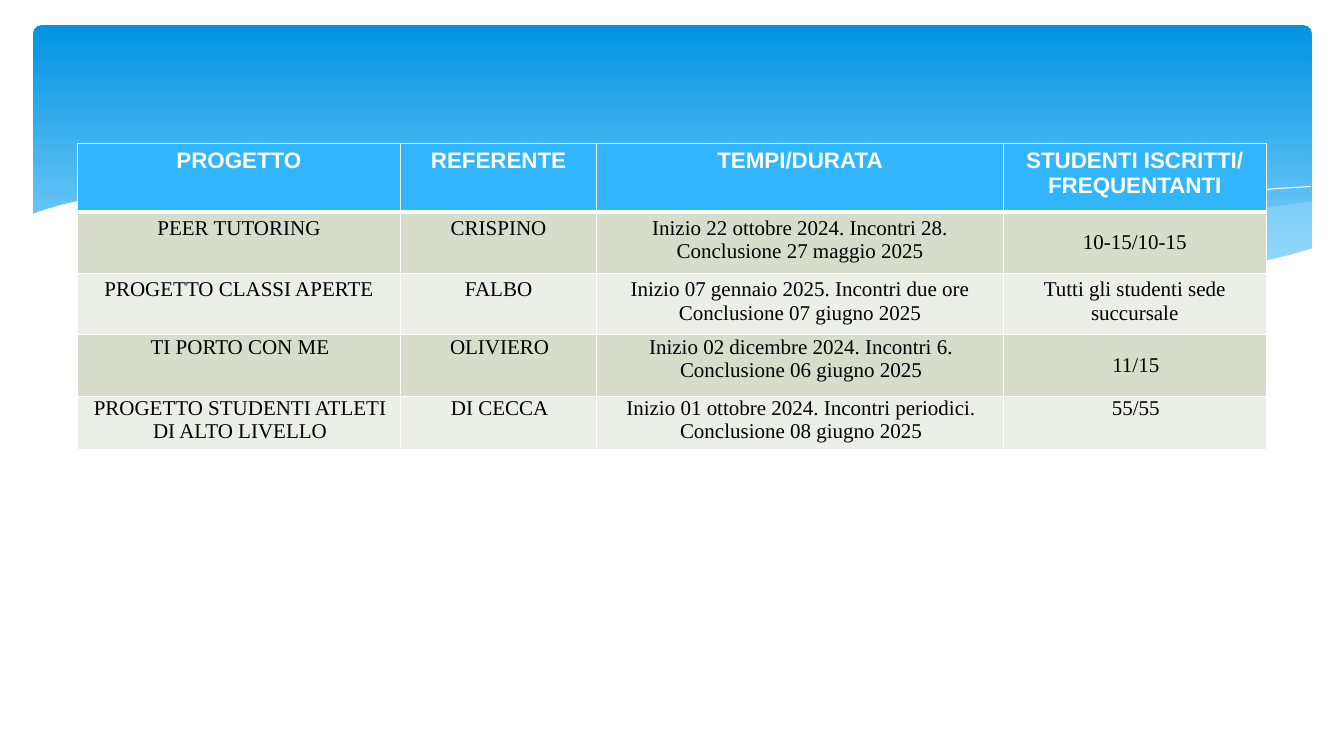
import lxml.etree
import pptx
import pptx.dml.color
import pptx.enum.shapes
import pptx.enum.text
import pptx.oxml.ns
import pptx.util

Inches = pptx.util.Inches
Pt = pptx.util.Pt
qn = pptx.oxml.ns.qn

COLORS = {
    "white": "FFFFFF",
    "black": "000000",
    "sky_top": "0293E0",
    "sky_bottom": "83D3FE",
    "wave": "C6E7FC",
    "header": "31B6FD",
    "row_dark": "D8DDCB",
    "row_light": "ECEFE7",
}

# Outlines of the waves below the sky band, in inches
RIGHT_WAVE = [
    (13.01, 2), (12.46, 2.07), (11.88, 2.16), (11.1, 2.3), (10.38, 2.42),
    (9.72, 2.53), (8.82, 2.65), (9.4, 2.71), (9.93, 2.75), (10.41, 2.77),
    (10.85, 2.78), (11.38, 2.76), (11.86, 2.72), (12.28, 2.65),
    (12.66, 2.57), (13.01, 2.47),
]
MIDDLE_WAVE = [
    (11.9, 2.73), (11.16, 2.65), (10.34, 2.54), (9.41, 2.4), (8.39, 2.22),
    (7.78, 2.11), (7.21, 2.03), (6.69, 1.96), (6.19, 1.91), (5.6, 1.87),
    (5.06, 1.85), (4.59, 1.86), (4.18, 1.88), (3.82, 1.91), (4.56, 1.99),
    (5.11, 2.07), (5.99, 2.22), (7.06, 2.4), (8.02, 2.55), (8.87, 2.66),
    (9.63, 2.74), (10.3, 2.77), (10.9, 2.78), (11.43, 2.77),
]
LONG_CREST = [
    (4.12, 1.95), (4.58, 1.9), (5.16, 1.87), (5.77, 1.87), (6.52, 1.9),
    (7.1, 1.94), (7.75, 2), (8.48, 2.08), (9.27, 2.19), (10.14, 2.33),
    (11.08, 2.51), (12.1, 2.72),
]
RIGHT_CREST = [
    (8.18, 2.57), (8.7, 2.46), (9.27, 2.35), (9.97, 2.23), (10.75, 2.1),
    (11.55, 1.99), (12.13, 1.92), (12.67, 1.87), (13, 1.85),
]
WHITE_WAVE = [
    (13.03, 2.46), (12.79, 2.53), (12.54, 2.59), (12.27, 2.65),
    (11.98, 2.69), (11.51, 2.74), (10.97, 2.77), (10.37, 2.76),
    (9.69, 2.72), (8.91, 2.65), (8.04, 2.54), (7.06, 2.39), (5.96, 2.2),
    (5.21, 2.07), (4.53, 1.97), (3.9, 1.9), (3.33, 1.86), (2.82, 1.84),
    (2.35, 1.84), (1.94, 1.85), (1.58, 1.87), (1.27, 1.91), (1.01, 1.95),
    (0.79, 1.99), (0.61, 2.03), (0.48, 2.07), (0.38, 2.1), (0.31, 2.13),
    (0.31, 3.29), (13.03, 3.29),
]

# Table content: each cell is a list of paragraphs
PROJECTS = [
    [["PROGETTO"], ["REFERENTE"], ["TEMPI/DURATA"],
     ["STUDENTI ISCRITTI/", "FREQUENTANTI"]],
    [["PEER TUTORING"], ["CRISPINO"],
     ["Inizio 22 ottobre 2024. Incontri 28.", "Conclusione 27 maggio 2025"],
     ["10-15/10-15"]],
    [["PROGETTO CLASSI APERTE"], ["FALBO"],
     ["Inizio 07 gennaio 2025. Incontri due ore Conclusione 07 giugno 2025"],
     ["Tutti gli studenti sede succursale"]],
    [["TI PORTO CON ME"], ["OLIVIERO"],
     ["Inizio 02 dicembre 2024. Incontri 6.", "Conclusione 06 giugno 2025"],
     ["11/15"]],
    [["PROGETTO STUDENTI ATLETI DI ALTO LIVELLO"], ["DI CECCA"],
     ["Inizio 01 ottobre 2024. Incontri periodici. Conclusione 08 giugno 2025"],
     ["55/55"]],
]
COLUMN_WIDTHS = [3.2, 1.95, 4.03, 2.61]
ROW_HEIGHTS = [0.68, 0.61, 0.61, 0.61, 0.53]
WIDE_MARGINS = (0.1, 0.05, 0.1, 0.05)
TIGHT_MARGINS = (0.04, 0.01, 0.02, 0.01)
MIDDLE_CELLS = {(1, 3), (3, 3)}


def rgb(name):
    return pptx.dml.color.RGBColor.from_string(COLORS[name])


class ProjectSlide:
    def __init__(self, slide):
        self.slide = slide
        self.header_style = ("Arial", 16, True, "white")
        self.body_style = ("Times New Roman", 15, False, "black")

    def sky_band(self, left, top, width, height):
        band = self.slide.shapes.add_shape(
            pptx.enum.shapes.MSO_SHAPE.ROUNDED_RECTANGLE,
            Inches(left), Inches(top), Inches(width), Inches(height))
        band.shadow.inherit = False
        band.adjustments[0] = 0.03
        band.line.fill.background()
        band.fill.gradient()
        band.fill.gradient_angle = 270
        stops = zip(band.fill.gradient_stops,
                    [("sky_top", 0), ("sky_bottom", 0.9)])
        for stop, (color, position) in stops:
            stop.color.rgb = rgb(color)
            stop.position = position

    def outline(self, points, close):
        corners = [(Inches(x), Inches(y)) for x, y in points]
        builder = self.slide.shapes.build_freeform(*corners[0], scale=1.0)
        builder.add_line_segments(corners[1:], close=close)
        curve = builder.convert_to_shape()
        curve.shadow.inherit = False
        return curve

    def wave(self, points, color, opacity=100):
        wave = self.outline(points, close=True)
        wave.line.fill.background()
        wave.fill.solid()
        wave.fill.fore_color.rgb = rgb(color)
        if opacity < 100:
            tint = wave.fill._xPr.find(qn("a:solidFill"))[0]
            lxml.etree.SubElement(tint, qn("a:alpha"), val=str(opacity * 1000))

    def crest(self, points):
        crest = self.outline(points, close=False)
        crest.fill.background()
        crest.line.color.rgb = rgb("white")
        crest.line.width = Pt(0)

    def borders(self, cell, top, bottom):
        properties = cell._tc.get_or_add_tcPr()
        widths = {"lnL": 1, "lnR": 1, "lnT": top, "lnB": bottom}
        for index, (side, width) in enumerate(widths.items()):
            line = lxml.etree.Element(qn("a:" + side), w=str(Pt(width)))
            solid = lxml.etree.SubElement(line, qn("a:solidFill"))
            lxml.etree.SubElement(solid, qn("a:srgbClr"), val=COLORS["white"])
            properties.insert(index, line)

    def cell(self, cell, paragraphs, style, fill, margins, middle):
        font_name, size, bold, color = style
        cell.fill.solid()
        cell.fill.fore_color.rgb = rgb(fill)
        (cell.margin_left, cell.margin_top,
         cell.margin_right, cell.margin_bottom) = map(Inches, margins)
        anchors = pptx.enum.text.MSO_ANCHOR
        cell.vertical_anchor = anchors.MIDDLE if middle else anchors.TOP
        for index, text in enumerate(paragraphs):
            frame = cell.text_frame
            paragraph = frame.add_paragraph() if index else frame.paragraphs[0]
            paragraph.alignment = pptx.enum.text.PP_ALIGN.CENTER
            run = paragraph.add_run()
            run.text = text
            run.font.name = font_name
            run.font.size = Pt(size)
            run.font.bold = bold
            run.font.color.rgb = rgb(color)

    def project_table(self, left, top):
        table = self.slide.shapes.add_table(
            len(ROW_HEIGHTS), len(COLUMN_WIDTHS), Inches(left), Inches(top),
            Inches(sum(COLUMN_WIDTHS)), Inches(sum(ROW_HEIGHTS))).table
        table.horz_banding = False
        for column, width in zip(table.columns, COLUMN_WIDTHS):
            column.width = Inches(width)
        for r, project in enumerate(PROJECTS):
            table.rows[r].height = Inches(ROW_HEIGHTS[r])
            style = self.body_style if r else self.header_style
            fill = ("row_dark" if r % 2 else "row_light") if r else "header"
            margins = WIDE_MARGINS if r < 3 else TIGHT_MARGINS
            for c, paragraphs in enumerate(project):
                cell = table.cell(r, c)
                self.cell(cell, paragraphs, style, fill, margins,
                          (r, c) in MIDDLE_CELLS)
                self.borders(cell, 3 if r == 1 else 1, 3 if r == 0 else 1)


def main():
    deck = pptx.Presentation()
    deck.slide_width, deck.slide_height = Inches(13.33), Inches(7.5)
    page = ProjectSlide(deck.slides.add_slide(deck.slide_layouts[6]))

    # Sky band with its waves
    page.sky_band(0.33, 0.25, 12.68, 2.7)
    page.wave(RIGHT_WAVE, "wave", 29)
    page.wave(MIDDLE_WAVE, "wave", 40)
    page.crest(LONG_CREST)
    page.crest(RIGHT_CREST)
    page.wave(WHITE_WAVE, "white")

    # Projects
    page.project_table(0.77, 1.42)
    deck.save("out.pptx")


if __name__ == "__main__":
    main()
